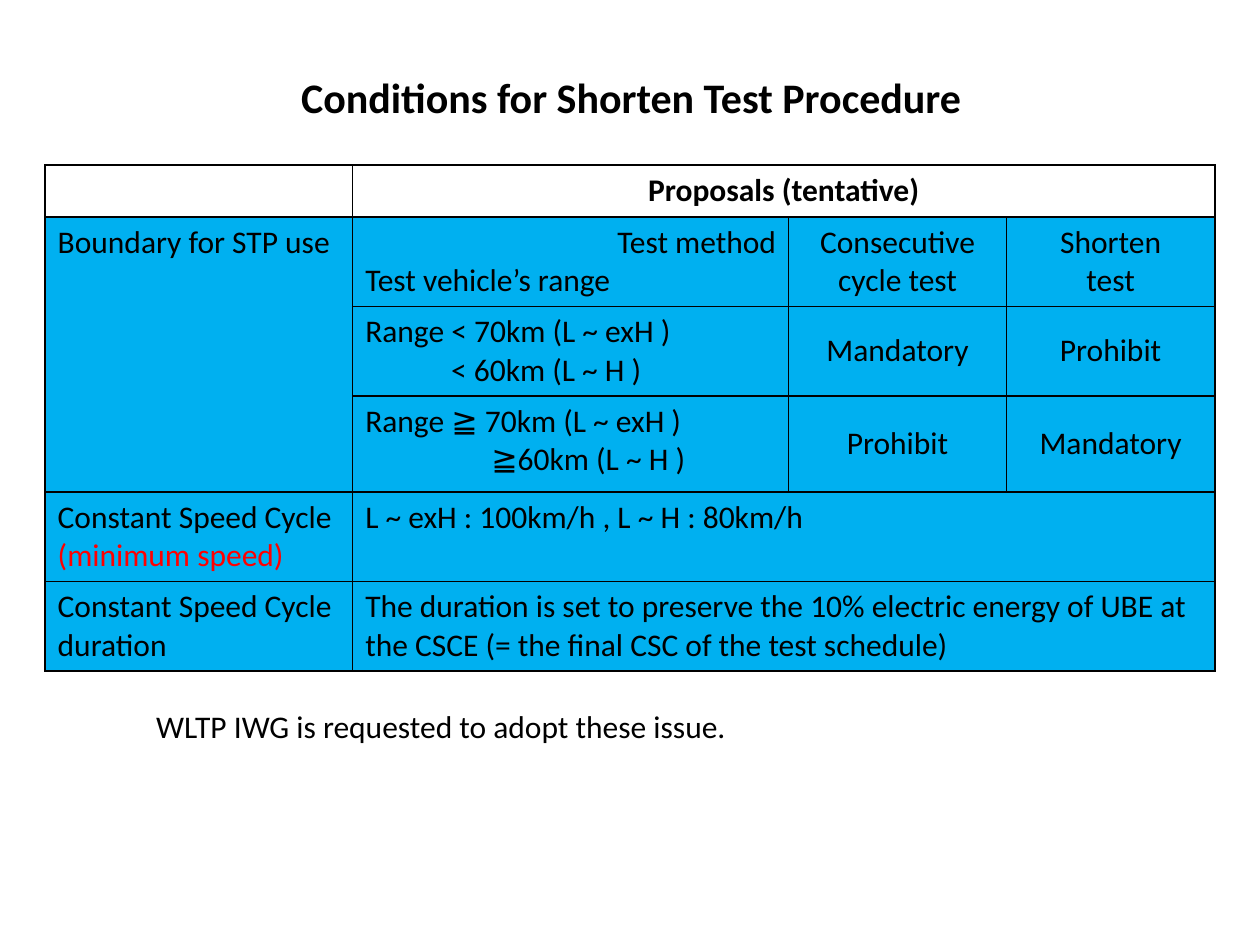
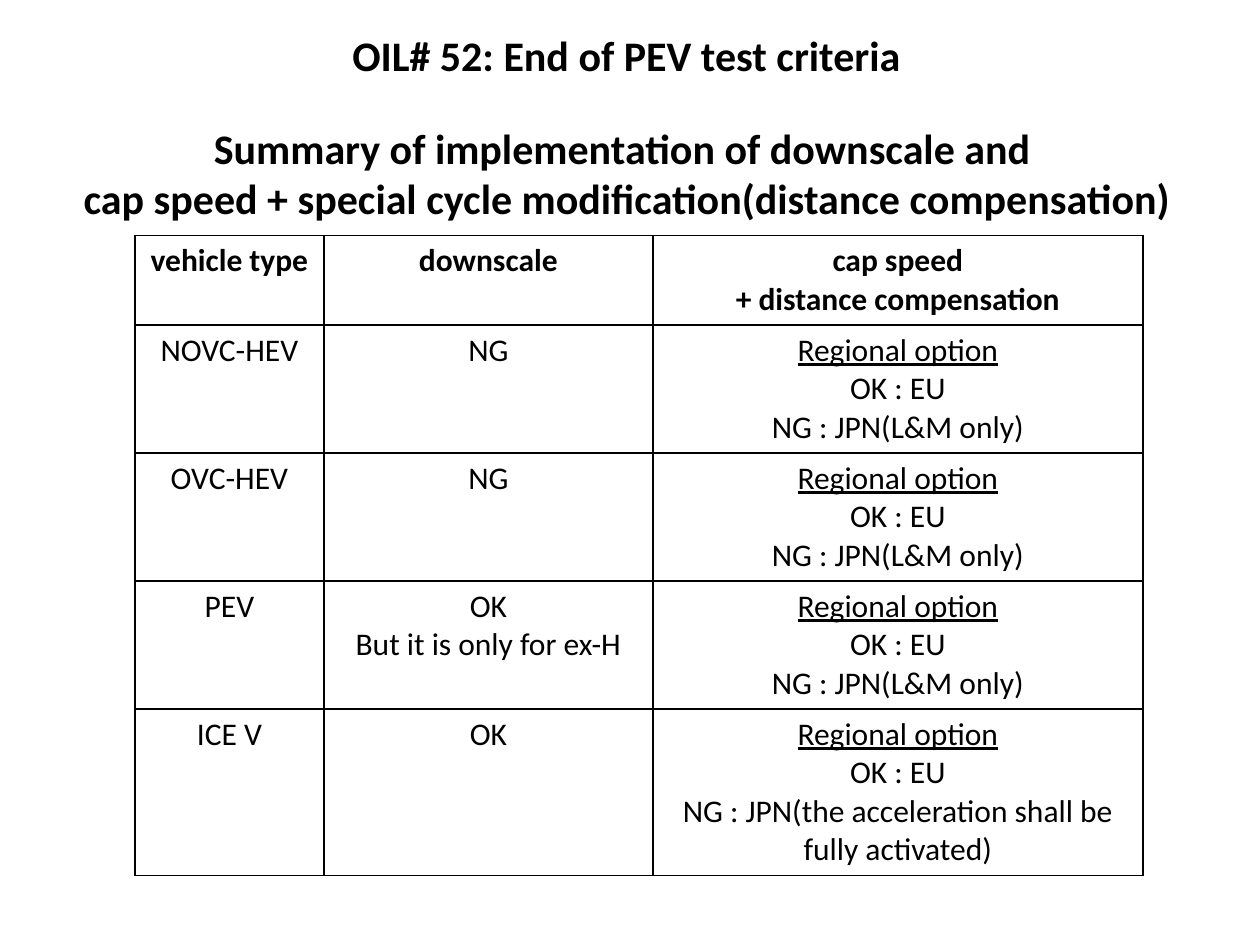
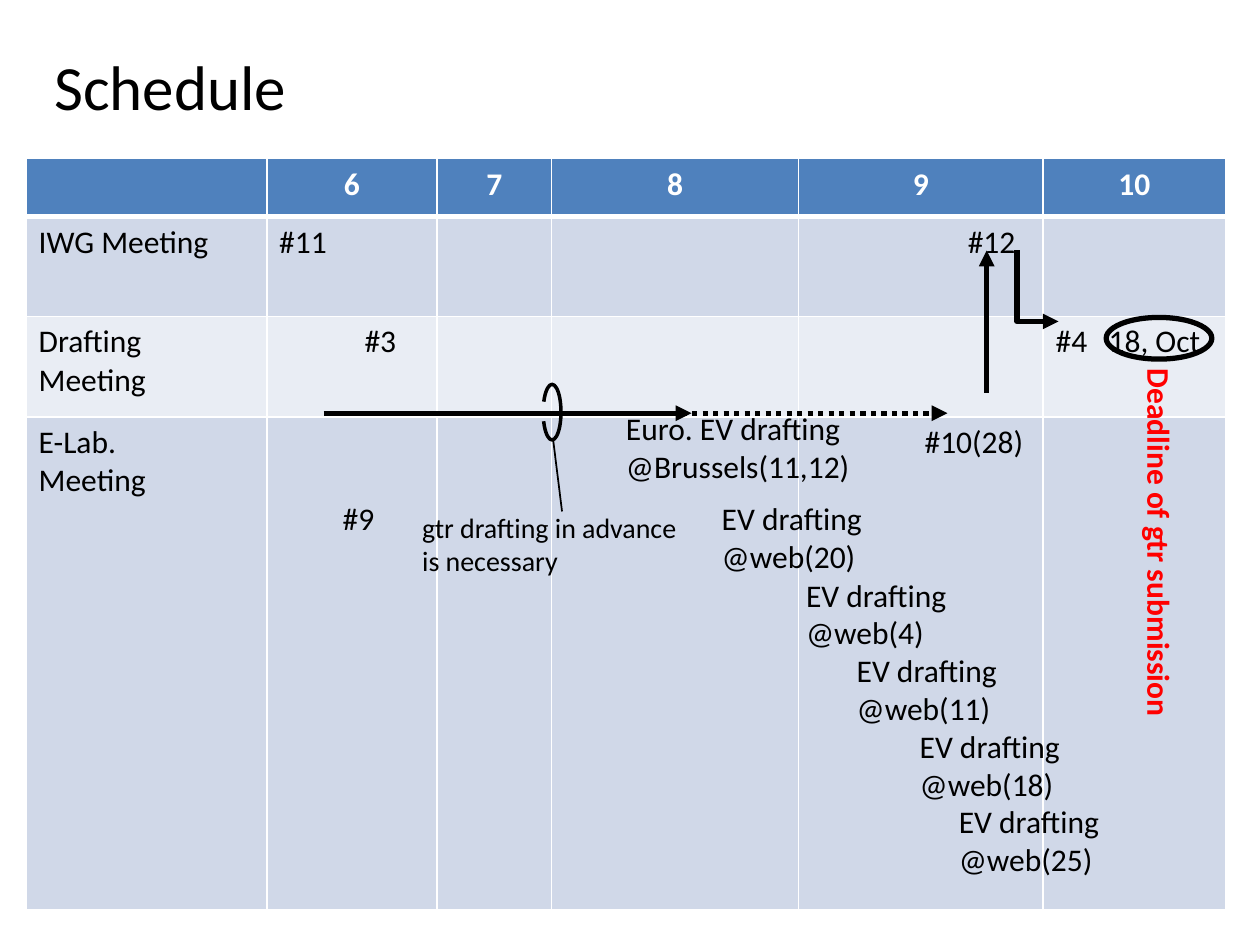
from lxml.etree import SubElement
from pptx import Presentation
from pptx.dml.color import RGBColor
from pptx.enum.dml import MSO_LINE
from pptx.enum.shapes import MSO_CONNECTOR, MSO_SHAPE
from pptx.enum.text import MSO_ANCHOR, MSO_AUTO_SIZE, PP_ALIGN
from pptx.oxml import parse_xml
from pptx.oxml.ns import nsdecls, qn
from pptx.util import Cm, Pt

BLACK = RGBColor(0x00, 0x00, 0x00)
WHITE = RGBColor(0xFF, 0xFF, 0xFF)
RED = RGBColor(0xFF, 0x00, 0x00)
SKY = RGBColor(0x00, 0xB0, 0xF0)
HEADER_BLUE = RGBColor(0x4F, 0x81, 0xBD)
BAND_DARK = RGBColor(0xD0, 0xD8, 0xE8)
BAND_LIGHT = RGBColor(0xE9, 0xED, 0xF4)
FONT = "Calibri"
LEFT, CENTER, RIGHT = PP_ALIGN.LEFT, PP_ALIGN.CENTER, PP_ALIGN.RIGHT


def write(tf, text, size=18, bold=False, color=BLACK, align=LEFT, wrap=None):
    if wrap is not None:
        tf.word_wrap = wrap
        tf.auto_size = MSO_AUTO_SIZE.NONE
        tf.vertical_anchor = MSO_ANCHOR.TOP
    for i, line in enumerate(text.split("\n")):
        p = tf.paragraphs[0] if i == 0 else tf.add_paragraph()
        p.alignment = align
        r = p.add_run()
        r.text = line
        r.font.name = FONT
        r.font.size = Pt(size)
        r.font.bold = bold
        r.font.color.rgb = color


def add_grid(s, left, top, widths, heights, line, header_rule=1):
    frame = s.shapes.add_table(len(heights), len(widths), Cm(left), Cm(top),
                               Cm(sum(widths)), Cm(sum(heights)))
    table = frame.table
    table.horz_banding = False
    for column, width in zip(table.columns, widths):
        column.width = Cm(width)
    for i, (row, height) in enumerate(zip(table.rows, heights)):
        row.height = Cm(height)
        for cell in row.cells:
            cell.fill.background()
            tcPr = cell._tc.get_or_add_tcPr()
            for k, side in enumerate("LRTB"):
                heavy = (i, side) in ((0, "B"), (1, "T"))
                weight = Pt(header_rule if heavy else 1)
                tcPr.insert(k, parse_xml(
                    f'<a:ln{side} {nsdecls("a")} w="{weight}"><a:solidFill>'
                    f'<a:srgbClr val="{line}"/></a:solidFill></a:ln{side}>'))
    return table


prs = Presentation()
prs.slide_width = Cm(25.4)
prs.slide_height = Cm(19.05)

titles = [
    ("Conditions for Shorten Test Procedure", 5.74, 1.32, 13.97, 1.27, 24, True, CENTER),
    ("OIL# 52: End of PEV test criteria", 6.38, 0.46, 12.5, 1.3, 24, True, CENTER),
    ("Schedule", 0.84, 0.84, 5.23, 1.8, 36, False, LEFT),
]
slides = []
for text, x, y, w, h, size, bold, align in titles:
    s = prs.slides.add_slide(prs.slide_layouts[5])
    title = s.shapes.title
    title.left, title.top, title.width, title.height = Cm(x), Cm(y), Cm(w), Cm(h)
    write(title.text_frame, text, size=size, bold=bold, align=align, wrap=False)
    slides.append(s)
conditions, summary, schedule = slides

table = add_grid(conditions, 0.91, 3.33, [6.2, 8.79, 4.39, 4.2],
                 [1.04, 1.8, 1.8, 1.94, 1.8, 1.8], BLACK)
for row in list(table.rows)[1:]:
    for cell in row.cells:
        cell.fill.solid()
        cell.fill.fore_color.rgb = SKY
table.cell(1, 0).merge(table.cell(3, 0))
for row in (0, 4, 5):
    table.cell(row, 1).merge(table.cell(row, 3))
write(table.cell(0, 1).text_frame, "Proposals (tentative)", bold=True, align=CENTER)
entries = [
    (1, 0, "Boundary for STP use"),
    (1, 1, "Test method\nTest vehicle’s range"),
    (1, 2, "Consecutive cycle test"),
    (1, 3, "Shorten\ntest"),
    (2, 1, "Range < 70km (L ~ exH )\n< 60km (L ~ H )"),
    (2, 2, "Mandatory"),
    (2, 3, "Prohibit"),
    (3, 1, "Range ≧ 70km (L ~ exH )\n≧60km (L ~ H )"),
    (3, 2, "Prohibit"),
    (3, 3, "Mandatory"),
    (4, 0, "Constant Speed Cycle\n(minimum speed)"),
    (4, 1, "L ~ exH : 100km/h , L ~ H : 80km/h"),
    (5, 0, "Constant Speed Cycle duration"),
    (5, 1, "The duration is set to preserve the 10% electric energy of UBE at "
           "the CSCE (= the final CSC of the test schedule)"),
]
for row, col, text in entries:
    cell = table.cell(row, col)
    write(cell.text_frame, text, align=CENTER if col > 1 else LEFT)
    if col > 1 and row > 1:
        cell.vertical_anchor = MSO_ANCHOR.MIDDLE
table.cell(1, 1).text_frame.paragraphs[0].alignment = RIGHT
table.cell(4, 0).text_frame.paragraphs[1].runs[0].font.color.rgb = RED
for row, indent in ((2, 1.73), (3, 2.54)):
    p = table.cell(row, 1).text_frame.paragraphs[1]
    p._p.get_or_add_pPr().set("marL", str(Cm(indent)))
request = conditions.shapes.add_textbox(Cm(2.9), Cm(14.12), Cm(12.7), Cm(1.02))
write(request.text_frame, "WLTP IWG is requested to adopt these issue.", wrap=True)

table = add_grid(summary, 2.72, 4.75, [3.81, 6.63, 9.88],
                 [1.78, 2.54, 2.54, 2.54, 3.3], BLACK)
option = "Regional option\nOK : EU\nNG : JPN"
only_lm = option + "(L&M only)"
rows = [
    ("vehicle type", "downscale", "cap speed\n+ distance compensation"),
    ("NOVC-HEV", "NG", only_lm),
    ("OVC-HEV", "NG", only_lm),
    ("PEV", "OK\nBut it is only for ex-H", only_lm),
    ("ICE V", "OK", option + "(the acceleration shall be fully activated)"),
]
for i, texts in enumerate(rows):
    for j, text in enumerate(texts):
        write(table.cell(i, j).text_frame, text, bold=i == 0, align=CENTER)
    if i > 0:
        table.cell(i, 2).text_frame.paragraphs[0].runs[0].font.underline = True
subtitle = summary.shapes.add_textbox(Cm(0.89), Cm(2.34), Cm(23.5), Cm(2.31))
write(subtitle.text_frame, "Summary of implementation of downscale and \n"
      "cap speed + special cycle modification(distance compensation)",
      size=24, bold=True, align=CENTER, wrap=True)

table = add_grid(schedule, 0.53, 3.2, [4.85, 3.43, 2.31, 4.98, 4.93, 3.68],
                 [1.17, 2.01, 2.03, 9.93], WHITE, header_rule=3)
for row, color in zip(table.rows, (HEADER_BLUE, BAND_DARK, BAND_LIGHT, BAND_DARK)):
    for cell in row.cells:
        cell.fill.solid()
        cell.fill.fore_color.rgb = color
for col, month in enumerate(range(6, 11), 1):
    write(table.cell(0, col).text_frame, str(month), bold=True, color=WHITE, align=CENTER)
meetings = [
    (1, 0, "IWG Meeting", 0.25, 0.13),
    (1, 1, "#11", 0.25, 0.13),
    (1, 4, "#12", 3.41, 0.13),
    (2, 0, "Drafting Meeting", 0.25, 0.13),
    (2, 1, "#3", 1.97, 0.13),
    (2, 5, "#4\t18, Oct", 0.25, 0.13),
    (3, 0, "E-Lab.\nMeeting", 0.25, 0.13),
    (3, 1, "#9", 1.53, 1.68),
    (3, 4, "#10(28)", 2.54, 0.13),
]
for row, col, text, left, top in meetings:
    cell = table.cell(row, col)
    cell.margin_left, cell.margin_top = Cm(left), Cm(top)
    write(cell.text_frame, text)
pPr = table.cell(2, 5).text_frame.paragraphs[0]._p.get_or_add_pPr()
tabs = SubElement(pPr, qn("a:tabLst"))
SubElement(tabs, qn("a:tab"), pos=str(Cm(1.07)), algn="l")
table.cell(2, 0).margin_right = Cm(1)

builder = schedule.shapes.build_freeform(Cm(20.5), Cm(5.05), scale=1.0)
builder.add_line_segments([(Cm(20.5), Cm(6.48)), (Cm(21.34), Cm(6.48))], close=False)
next_step = builder.convert_to_shape()
deadline_ring = schedule.shapes.add_shape(MSO_SHAPE.OVAL, Cm(22.3), Cm(6.4), Cm(2.13), Cm(0.84))
advance_arc = schedule.shapes.add_shape(MSO_SHAPE.ARC, Cm(10.95), Cm(7.75), Cm(0.36), Cm(1.12))
advance_arc.adjustments[0] = 139.02
advance_arc.adjustments[1] = 79.65
for sp, weight in ((next_step, 3), (deadline_ring, 3), (advance_arc, 2)):
    sp.shadow.inherit = False
    sp.fill.background()
    sp.line.color.rgb = BLACK
    sp.line.width = Pt(weight)

lines = [
    (6.53, 8.33, 19.1, 8.33, 3, True, MSO_LINE.ROUND_DOT),
    (19.89, 7.92, 19.89, 5.05, 3, True, None),
    (11.15, 8.86, 11.33, 10.31, 1, False, None),
    (6.53, 8.33, 13.94, 8.33, 3, True, None),
]
arrows = [next_step]
for x1, y1, x2, y2, weight, arrow, dash in lines:
    line = schedule.shapes.add_connector(MSO_CONNECTOR.STRAIGHT, Cm(x1), Cm(y1), Cm(x2), Cm(y2))
    line.line.color.rgb = BLACK
    line.line.width = Pt(weight)
    if dash:
        line.line.dash_style = dash
    SubElement(line._element.spPr, qn("a:effectLst"))
    if arrow:
        arrows.append(line)
for sp in arrows:
    SubElement(sp.line._get_or_add_ln(), qn("a:tailEnd"), type="triangle")

deadline = schedule.shapes.add_textbox(Cm(19.25), Cm(10.8), Cm(8.26), Cm(1.02))
deadline.rotation = 90
write(deadline.text_frame, "Deadline of gtr submission", bold=True, color=RED, wrap=True)
note = schedule.shapes.add_textbox(Cm(8.26), Cm(10.16), Cm(5.94), Cm(1.63))
write(note.text_frame, "gtr drafting in advance\nis necessary", size=16, wrap=True)
drafting = [
    ("Euro. EV drafting\n@Brussels(11,12)", 12.37, 8.13, 5.05),
    ("EV drafting\n@web(20)", 14.3, 9.93, 3.38),
    ("EV drafting\n@web(4)", 16, 11.48, 3.38),
    ("EV drafting\n@web(11)", 17.02, 13, 3.38),
    ("EV drafting\n@web(18)", 18.29, 14.53, 3.38),
    ("EV drafting\n@web(25)", 19.08, 16.05, 3.38),
]
for text, x, y, w in drafting:
    sp = schedule.shapes.add_textbox(Cm(x), Cm(y), Cm(w), Cm(1.8))
    write(sp.text_frame, text, wrap=False)

prs.save("out.pptx")
